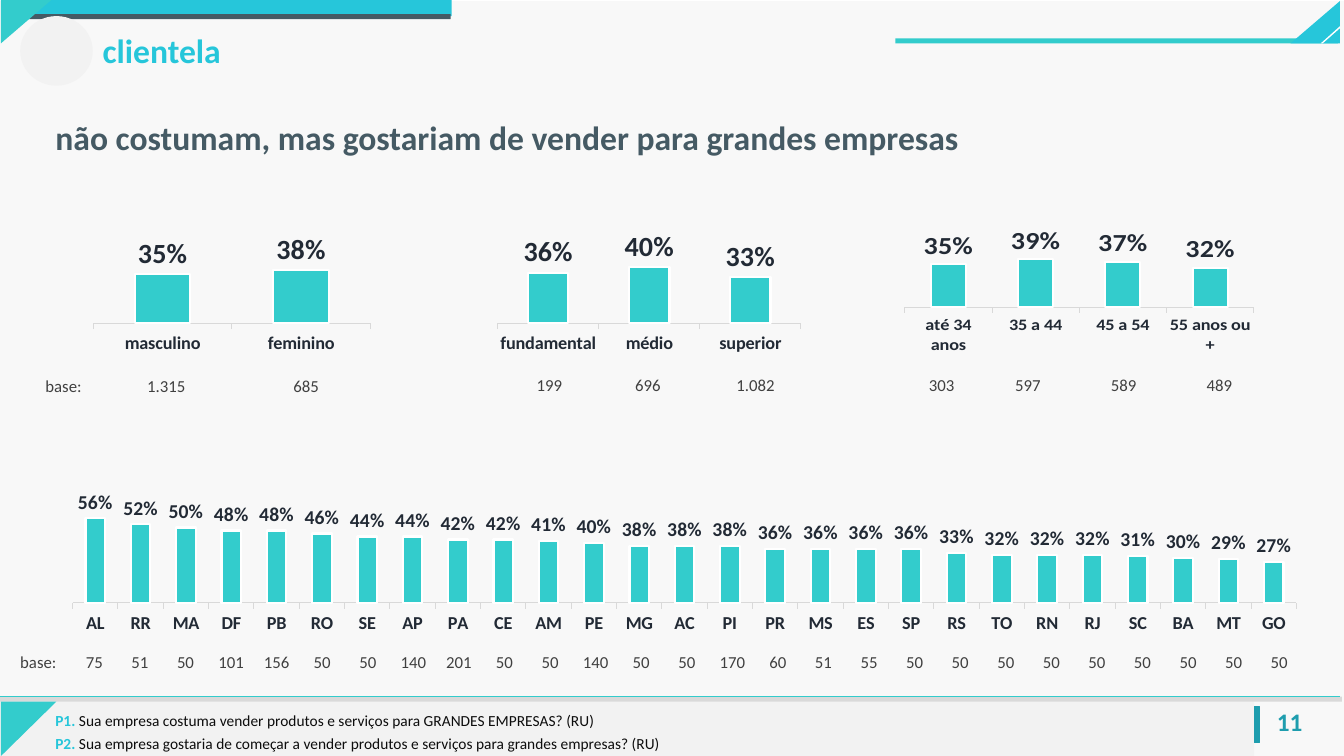
from lxml import etree
from pptx import Presentation
from pptx.chart.data import CategoryChartData
from pptx.dml.color import RGBColor
from pptx.enum import chart as ch, dml, shapes, text
from pptx.oxml import parse_xml
from pptx.oxml.ns import qn
from pptx.util import Pt

PX = 9144
HUE = {"teal": "33CCCC", "cyan": "26C6DA", "deep": "1E9DAE", "slate": "455A64",
       "navy": "222A35", "gray": "404040", "ink": "0D0D0D", "rule": "D9D9D9",
       "pale": "F2F2F2", "mist": "F8F8F8", "white": "FFFFFF"}
RGB = {name: RGBColor.from_string(code) for name, code in HUE.items()}
NO_GRID = "{2D5ABB26-0587-4C30-8999-92F81FD0307C}"
C_NS = "http://schemas.openxmlformats.org/drawingml/2006/chart"


def px(*nums):
    return [round(n * PX) for n in nums]


def style(font, size, hue, bold=False):
    font.name, font.size, font.bold = "Calibri", Pt(size), bold
    font.color.rgb = RGB[hue]


prs = Presentation()
prs.slide_width, prs.slide_height = px(1333, 750)
slide = prs.slides.add_slide(prs.slide_layouts[5])
tree = slide.shapes

back = tree.add_shape(shapes.MSO_SHAPE.RECTANGLE, *px(0, 0, 1333, 750))
back.shadow.inherit = False
back.line.fill.background()
back.fill.patterned()
back.fill.pattern = dml.MSO_PATTERN.DARK_HORIZONTAL
back.fill.fore_color.rgb = RGB["mist"]
back.fill.back_color.rgb = RGB["white"]

rect, oval = shapes.MSO_SHAPE.RECTANGLE, shapes.MSO_SHAPE.OVAL
for kind, box, hue in [
    (rect, (0, 696, 1244, 54), "pale"),
    (rect, (9, 0, 439, 16), "cyan"),
    (rect, (0, 691, 1331, 5), "rule"),
    (rect, (23, 14, 424, 5), "slate"),
    (rect, (888, 38, 439, 5), "teal"),
    (rect, (1244, 701, 5, 36), "deep"),
    (oval, (20, 16, 72, 69), "pale"),
]:
    part = tree.add_shape(kind, *px(*box))
    part.shadow.inherit = False
    part.fill.solid()
    part.fill.fore_color.rgb = RGB[hue]
    if hue == "deep":
        part.line.color.rgb = RGB[hue]
        part.line.width = Pt(0.75)
    else:
        part.line.fill.background()

for pts, hue in [
    ([(1, 0), (51, 0), (1, 43)], "teal"),
    ([(1329, 1), (1280, 43), (1329, 43)], "cyan"),
    ([(1329, 28), (1329, 26), (1310, 43), (1312, 43)], "white"),
    ([(1, 696), (56, 696), (1, 750)], "teal"),
]:
    pen = tree.build_freeform(*pts[0], scale=PX)
    pen.add_line_segments(pts[1:], close=True)
    part = pen.convert_to_shape()
    part.shadow.inherit = False
    part.fill.solid()
    part.fill.fore_color.rgb = RGB[hue]
    part.line.fill.background()

line = tree.add_connector(shapes.MSO_CONNECTOR.STRAIGHT, *px(0, 691, 1329, 691))
line.line.color.rgb = RGB["teal"]
line.line.width = Pt(0.5)
etree.SubElement(line._element.spPr, qn("a:effectLst"))

title = tree.title
title.left, title.top, title.width, title.height = px(45, 111, 1223, 50)
tree._spTree.append(title._element)
frame = title.text_frame
frame.text = "não costumam, mas gostariam de vender para grandes empresas"
frame.auto_size = text.MSO_AUTO_SIZE.NONE
frame.vertical_anchor = text.MSO_ANCHOR.TOP
frame.paragraphs[0].alignment = text.PP_ALIGN.LEFT
style(frame.paragraphs[0].runs[0].font, 24, "slate", True)

for box, size, hue, head, tail in [
    ((92, 25, 583, 50), 24, "cyan", "clientela", ""),
    ((1248, 696, 62, 40), 18, "deep", "11", ""),
    ((45, 701, 583, 29), 11, "cyan", "P1. ",
     "Sua empresa costuma vender produtos e serviços para GRANDES EMPRESAS? (RU)"),
    ((45, 723, 714, 29), 11, "cyan", "P2. ",
     "Sua empresa gostaria de começar a vender produtos e serviços para grandes empresas? (RU)"),
]:
    frame = tree.add_textbox(*px(*box)).text_frame
    frame.word_wrap = head != "11"
    para = frame.paragraphs[0]
    para.text = head
    style(para.runs[0].font, size, hue, True)
    if head == "11":
        para.alignment = text.PP_ALIGN.CENTER
    if tail:
        run = para.add_run()
        run.text = tail
        style(run.font, size, "ink")

states = "AL RR MA DF PB RO SE AP PA CE AM PE MG AC PI PR MS ES SP RS TO RN RJ SC BA MT GO".split()
rates = [56, 52, 50, 48, 48, 46, 44, 44, 42, 42, 41, 40, 38, 38, 38,
         36, 36, 36, 36, 33, 32, 32, 32, 31, 30, 29, 27]
for box, cats, vals, size, gap, lap in [
    ((82, 182, 296, 170), ["masculino", "feminino"], [35, 38], 20, 150, 0),
    ((884, 182, 373, 170), ["até 34 anos", "35 a 44", "45 a 54", "55 anos ou +"],
     [35, 39, 37, 32], 20, 150, 0),
    ((482, 182, 324, 170), ["fundamental", "médio", "superior"], [36, 40, 33], 20, 150, 0),
    ((25, 448, 1308, 182), states, rates, 14, 132, 97),
]:
    data = CategoryChartData(number_format="0%")
    data.categories = cats
    data.add_series("Series 1", [val / 100 for val in vals])
    chart = tree.add_chart(ch.XL_CHART_TYPE.COLUMN_CLUSTERED, *px(*box), data).chart
    chart.has_legend = chart.has_title = False
    chart.font.name, chart.font.size = "Calibri", Pt(10)
    plot = chart.plots[0]
    plot.vary_by_categories = False
    plot.gap_width, plot.overlap = gap, lap
    bars = plot.series[0]
    bars.format.fill.solid()
    bars.format.fill.fore_color.rgb = RGB["teal"]
    bars.format.line.color.rgb = RGB["white"]
    bars.format.line.width = Pt(1.5)
    plot.has_data_labels = True
    tags = plot.data_labels
    tags.show_value = True
    tags.number_format, tags.number_format_is_linked = "0%", False
    tags.position = ch.XL_LABEL_POSITION.OUTSIDE_END
    style(tags.font, size, "navy", True)
    axis = chart.category_axis
    axis.major_tick_mark = ch.XL_TICK_MARK.OUTSIDE
    axis.format.line.color.rgb = RGB["rule"]
    axis.format.line.width = Pt(0.75)
    style(axis.tick_labels.font, 13, "navy", True)
    axis = chart.value_axis
    axis.minimum_scale, axis.maximum_scale = 0, 0.8
    axis.has_major_gridlines = axis.visible = False
    area = chart._chartSpace.chart.plotArea
    for old in area.findall(qn("c:layout")):
        area.remove(old)
    area.insert(0, parse_xml(
        f'<c:layout xmlns:c="{C_NS}"><c:manualLayout><c:layoutTarget val="inner"/>'
        '<c:xMode val="edge"/><c:yMode val="edge"/><c:x val="0.036"/><c:y val="0.167"/>'
        '<c:w val="0.928"/><c:h val="0.659"/></c:manualLayout></c:layout>'))

left, mid = text.PP_ALIGN.LEFT, text.PP_ALIGN.CENTER
bases = ("base: 75 51 50 101 156 50 50 140 201 50 50 140 50 50 170 60 51 55 "
         + "50 " * 9).split()
for x, y, cols, words, align, shift in [
    (35, 358, [82, 164, 64], ["base:", "1.315", "685"], left, 1),
    (877, 357, [95] * 4, ["303", "597", "589", "489"], mid, 0),
    (482, 357, [107] * 3, ["199", "696", "1.082"], mid, 0),
    (10, 632, [61] + [1221 / 27] * 27, bases, mid, None),
]:
    grid = tree.add_table(1, len(cols), *px(x, y, sum(cols), 37)).table
    grid.first_row = grid.horz_banding = False
    grid._tbl.tblPr[0].text = NO_GRID
    for i, (wide, word) in enumerate(zip(cols, words)):
        grid.columns[i].width = px(wide)[0]
        cell = grid.cell(0, i)
        cell.fill.background()
        cell.text_frame.text = word
        para = cell.text_frame.paragraphs[0]
        para.line_spacing = 1.5
        para.alignment = left if word == "base:" else align
        style(para.runs[0].font, 12, "gray")
        if i == shift:
            cell.margin_left = px(29)[0]
        if shift is None and i:
            cell.vertical_anchor = text.MSO_ANCHOR.MIDDLE
            cell.margin_left, cell.margin_right, cell.margin_top, cell.margin_bottom = px(1, 1, 1, 0)

prs.save("out.pptx")
